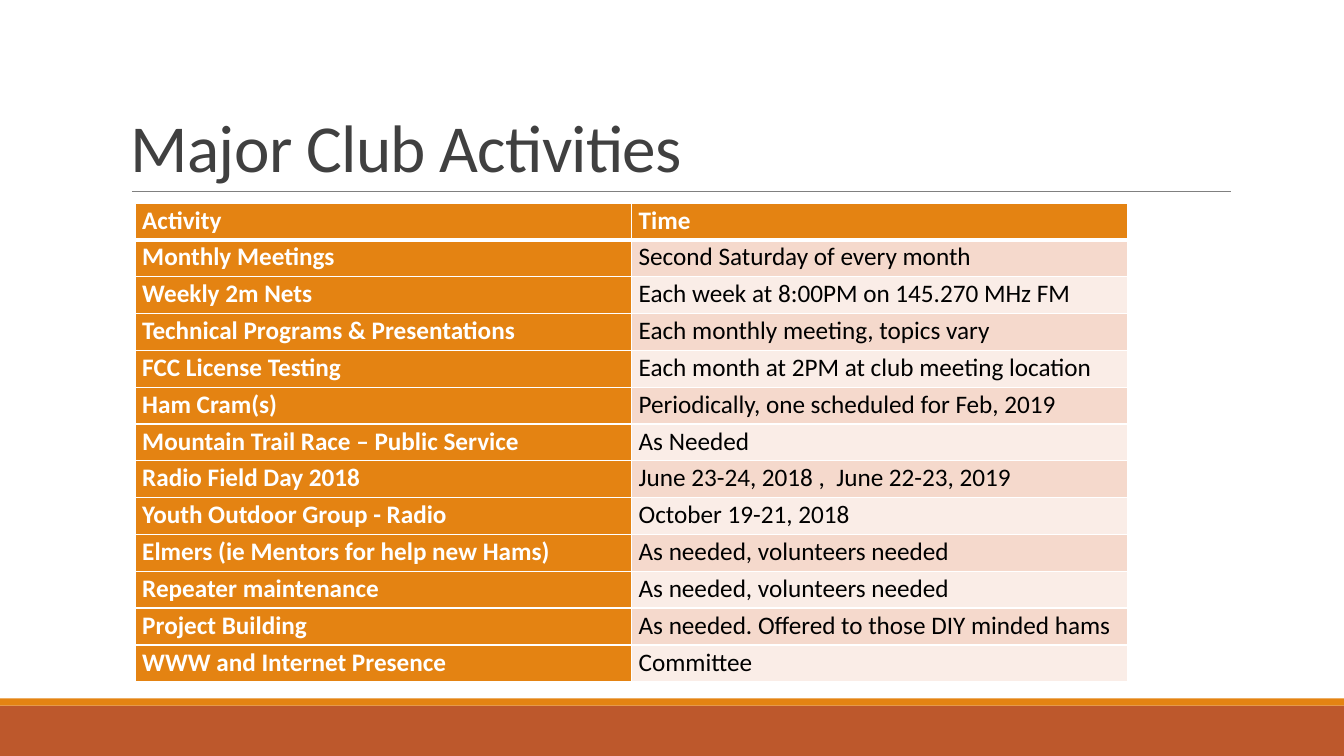
from dataclasses import dataclass

from lxml.etree import SubElement
from pptx import Presentation
from pptx.dml.color import RGBColor
from pptx.enum.shapes import MSO_CONNECTOR, MSO_SHAPE
from pptx.enum.text import MSO_ANCHOR, PP_ALIGN
from pptx.oxml.ns import qn
from pptx.slide import Slide
from pptx.table import _Cell
from pptx.text.text import TextFrame
from pptx.util import Pt

COLORS = {
    "white": "FFFFFF",
    "black": "000000",
    "title": "404040",
    "rule": "808080",
    "orange": "E48312",
    "rust": "BD582C",
    "band_dark": "F5D9CC",
    "band_light": "FAEDE7",
}
FONT = "Calibri"
SLIDE_WIDTH, SLIDE_HEIGHT = 960, 540
TABLE_LEFT, TABLE_TOP = 96.6, 145
COLUMN_WIDTH, ROW_HEIGHT = 354.6, 26.32
GRID_LINE, HEADER_LINE = 1, 3


@dataclass(frozen=True)
class FooterBand:
    top: float
    height: float
    color: str


@dataclass(frozen=True)
class Activity:
    name: str
    time: str


FOOTER_BANDS = [
    FooterBand(504, 36, "rust"),
    FooterBand(498.8, 5.2, "orange"),
]

HEADING = Activity("Activity", "Time")
ACTIVITIES = [
    Activity("Monthly Meetings", "Second Saturday of every month"),
    Activity("Weekly 2m Nets", "Each week at 8:00PM on 145.270 MHz FM"),
    Activity("Technical Programs & Presentations", "Each monthly meeting, topics vary"),
    Activity("FCC License Testing", "Each month at 2PM at club meeting location"),
    Activity("Ham Cram(s)", "Periodically, one scheduled for Feb, 2019"),
    Activity("Mountain Trail Race – Public Service", "As Needed"),
    Activity("Radio Field Day 2018", "June 23-24, 2018 ,  June 22-23, 2019"),
    Activity("Youth Outdoor Group - Radio", "October 19-21, 2018"),
    Activity("Elmers (ie Mentors for help new Hams)", "As needed, volunteers needed"),
    Activity("Repeater maintenance", "As needed, volunteers needed"),
    Activity("Project Building", "As needed. Offered to those DIY minded hams"),
    Activity("WWW and Internet Presence", "Committee"),
]


def rgb(name: str) -> RGBColor:
    return RGBColor.from_string(COLORS[name])


def write_text(frame: TextFrame, text: str, *, size: float, color: str,
               bold: bool = False, line_spacing: float = 1.0,
               tracking: float = 0) -> None:
    """Fill the frame with one left-aligned paragraph; tracking is in points."""
    paragraph = frame.paragraphs[0]
    paragraph.alignment = PP_ALIGN.LEFT
    paragraph.line_spacing = line_spacing
    run = paragraph.add_run()
    run.text = text
    run.font.name = FONT
    run.font.size = Pt(size)
    run.font.bold = bold
    run.font.color.rgb = rgb(color)
    if tracking:
        run.font._element.set("spc", str(round(tracking * 100)))


def add_footer_band(slide: Slide, band: FooterBand) -> None:
    bar = slide.shapes.add_shape(MSO_SHAPE.RECTANGLE, 0, Pt(band.top),
                                 Pt(SLIDE_WIDTH), Pt(band.height))
    bar.shadow.inherit = False
    bar.fill.solid()
    bar.fill.fore_color.rgb = rgb(band.color)
    bar.line.fill.background()


def add_title_rule(slide: Slide) -> None:
    rule = slide.shapes.add_connector(MSO_CONNECTOR.STRAIGHT, Pt(94.3), Pt(136.8),
                                      Pt(879.1), Pt(136.8))
    rule.line.color.rgb = rgb("rule")
    rule.line.width = Pt(0.5)
    SubElement(rule._element.spPr, qn("a:effectLst"))


def add_title(slide: Slide, text: str) -> None:
    title = slide.shapes.add_textbox(Pt(86.4), Pt(22.6), Pt(792), Pt(114.2))
    frame = title.text_frame
    frame.word_wrap = True
    frame.vertical_anchor = MSO_ANCHOR.BOTTOM
    write_text(frame, text, size=48, color="title", line_spacing=0.85, tracking=-0.5)


def add_border(cell: _Cell, side: str, width: float) -> None:
    border = SubElement(cell._tc.get_or_add_tcPr(), qn(f"a:ln{side}"),
                        w=str(Pt(width)))
    fill = SubElement(border, qn("a:solidFill"))
    SubElement(fill, qn("a:srgbClr"), val=COLORS["white"])


def fill_cell(cell: _Cell, text: str, *, fill: str, color: str, bold: bool,
              top_line: float, bottom_line: float) -> None:
    cell.margin_left = cell.margin_right = Pt(5)
    cell.margin_top = cell.margin_bottom = 0
    cell.vertical_anchor = MSO_ANCHOR.TOP
    for side, width in (("L", GRID_LINE), ("R", GRID_LINE),
                        ("T", top_line), ("B", bottom_line)):
        add_border(cell, side, width)
    cell.fill.solid()
    cell.fill.fore_color.rgb = rgb(fill)
    write_text(cell.text_frame, text, size=18, color=color, bold=bold,
               line_spacing=1.07)


def add_schedule(slide: Slide, heading: Activity, activities: list[Activity]) -> None:
    entries = [heading, *activities]
    schedule = slide.shapes.add_table(
        len(entries), 2, Pt(TABLE_LEFT), Pt(TABLE_TOP),
        Pt(2 * COLUMN_WIDTH), Pt(len(entries) * ROW_HEIGHT)).table
    schedule.first_col = True
    for column in schedule.columns:
        column.width = Pt(COLUMN_WIDTH)
    for index, entry in enumerate(entries):
        schedule.rows[index].height = Pt(ROW_HEIGHT)
        top_line = HEADER_LINE if index == 1 else GRID_LINE
        bottom_line = HEADER_LINE if index == 0 else GRID_LINE
        band = "band_dark" if index % 2 else "band_light"
        for column, text in enumerate((entry.name, entry.time)):
            emphasized = index == 0 or column == 0
            fill_cell(schedule.cell(index, column), text,
                      fill="orange" if emphasized else band,
                      color="white" if emphasized else "black",
                      bold=emphasized, top_line=top_line, bottom_line=bottom_line)


def main() -> None:
    presentation = Presentation()
    presentation.slide_width = Pt(SLIDE_WIDTH)
    presentation.slide_height = Pt(SLIDE_HEIGHT)
    slide = presentation.slides.add_slide(presentation.slide_layouts[6])
    for band in FOOTER_BANDS:
        add_footer_band(slide, band)
    add_title_rule(slide)
    add_title(slide, "Major Club Activities")
    add_schedule(slide, HEADING, ACTIVITIES)
    presentation.save("out.pptx")


if __name__ == "__main__":
    main()
